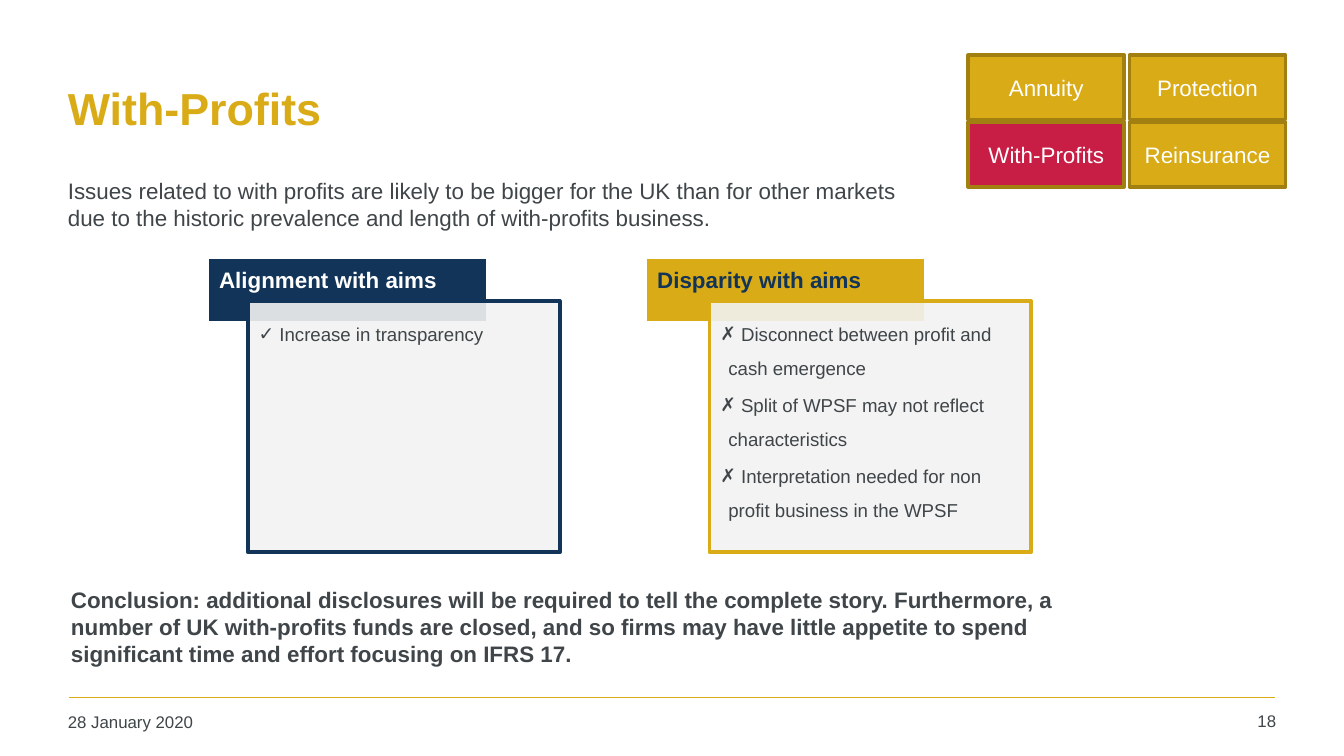
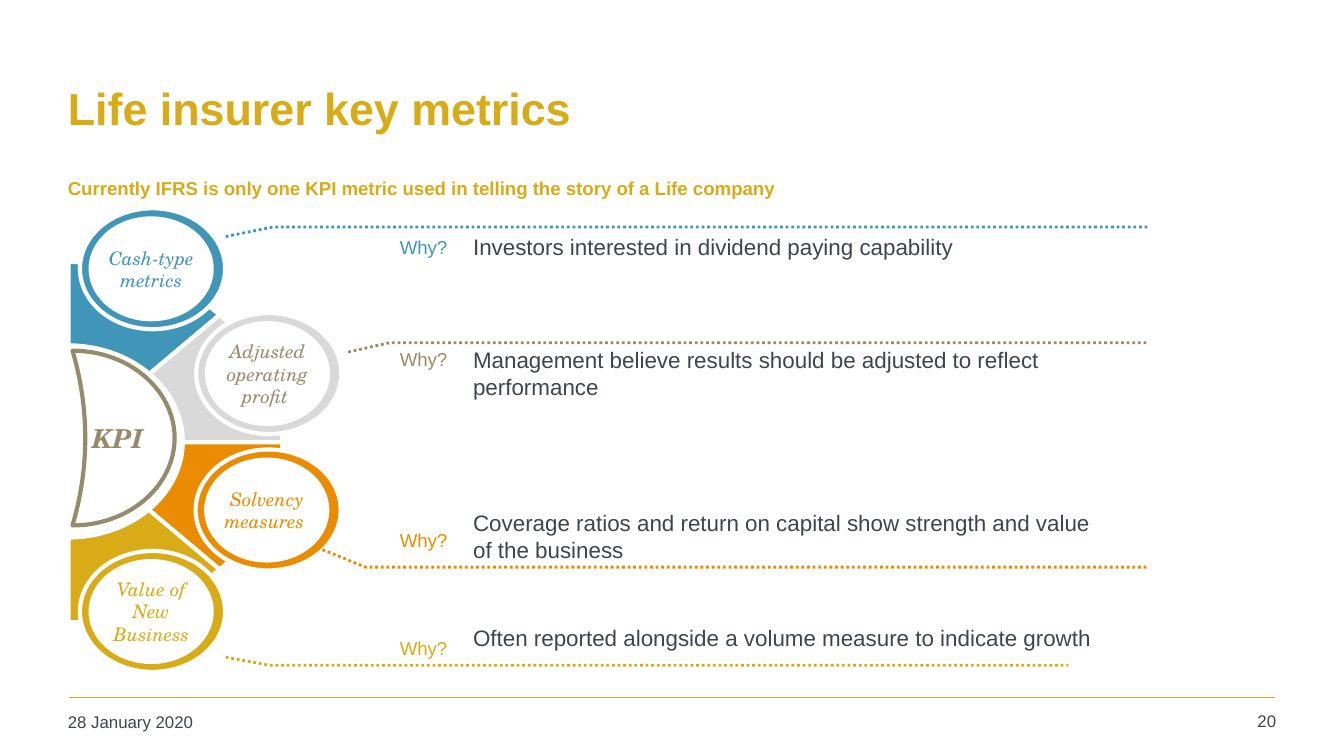
import math

import lxml.etree
import pptx
import pptx.dml.color
import pptx.enum.dml
import pptx.enum.shapes
import pptx.enum.text
import pptx.oxml.ns
import pptx.util

WIDE = pptx.util.Inches(10)
HIGH = pptx.util.Inches(5.625)
CELL = WIDE / 100
SANS = "Arial"
SERIF = "TeX Gyre Schola"
HUE = {
    "gold": "D9AB16", "bronze": "A17F10", "navy": "113458", "red": "C81E45",
    "ink": "3F4548", "white": "FFFFFF", "pale": "F2F2F2", "blue": "4096B8",
    "grey": "D9D9D9", "stone": "968C6D", "orange": "EB8C00",
}
FORM = pptx.enum.shapes.MSO_SHAPE
SIDE = pptx.enum.text.PP_ALIGN
ANCHOR = pptx.enum.text.MSO_ANCHOR
MARGIN = (0.75, 0.38, 0.75, 0.38)
NONE = (0, 0, 0, 0)
HUB = (5.1, 32.9)
REACH = (15.9, 13.4)


def grid(*cells):
    return [pptx.util.Emu(round(cell * CELL)) for cell in cells]


def tint(name):
    return pptx.dml.color.RGBColor.from_string(HUE[name])


def tag(node, name, **marks):
    return lxml.etree.SubElement(node, pptx.oxml.ns.qn(name), **marks)


def write(frame, text, size=12, color="ink", font=SANS, bold=False, slant=False,
          align=SIDE.LEFT, anchor=ANCHOR.TOP, inset=(1, 0.5, 1, 0.5),
          lead=None, after=None, bullet=None):
    frame.word_wrap = True
    frame.vertical_anchor = anchor
    (frame.margin_left, frame.margin_top,
     frame.margin_right, frame.margin_bottom) = grid(*inset)
    for row, line in enumerate(text.split("\n")):
        para = frame.add_paragraph() if row else frame.paragraphs[0]
        if bullet:
            props = para._p.get_or_add_pPr()
            hang = grid(0.6)[0]
            props.set("marL", str(hang))
            props.set("indent", str(-hang))
            tag(props, "a:buFont", typeface=font)
            tag(props, "a:buChar", char=bullet)
        para.alignment = align
        if lead:
            para.line_spacing = lead
        if after:
            para.space_after = pptx.util.Pt(after)
        run = para.add_run()
        run.text = line
        run.font.name = font
        run.font.size = pptx.util.Pt(size)
        run.font.bold = bold
        run.font.italic = slant
        run.font.color.rgb = tint(color)


def label(slide, spot, text, **style):
    write(slide.shapes.add_textbox(*grid(*spot)).text_frame, text, **style)


def paint(shape, fill, line, width):
    shape.shadow.inherit = False
    if fill:
        shape.fill.solid()
        shape.fill.fore_color.rgb = tint(fill)
    else:
        shape.fill.background()
    shape.line.color.rgb = tint(line)
    shape.line.width = pptx.util.Pt(width)


def block(slide, form, spot, fill, line, width=2, text=None, **style):
    shape = slide.shapes.add_shape(form, *grid(*spot))
    paint(shape, fill, line, width)
    if text:
        write(shape.text_frame, text, **style)
    return shape


def trace(slide, points, fill, line, width, close):
    spots = [grid(*point) for point in points]
    pen = slide.shapes.build_freeform(*spots[0])
    pen.add_line_segments(spots[1:], close=close)
    shape = pen.convert_to_shape()
    paint(shape, fill, line, width)
    return shape


def wedge(slide, start, stop, fill):
    first, last = math.radians(start), math.radians(stop)
    pull = 4 / 3 * math.tan((last - first) / 4)

    def spot(turn, bend):
        return (HUB[0] + REACH[0] * (math.cos(turn) - bend * math.sin(turn)),
                HUB[1] + REACH[1] * (math.sin(turn) + bend * math.cos(turn)))

    shape = trace(slide, [HUB, spot(first, 0), spot(first, pull),
                          spot(last, -pull), spot(last, 0)],
                  fill, "white", 2.25, True)
    name = pptx.oxml.ns.qn("a:lnTo")
    edge = shape._element.find(".//" + name).getparent()
    arc = tag(edge, "a:cubicBezTo")
    for leg in edge.findall(name)[1:]:
        arc.append(leg[0])
        edge.remove(leg)
    edge.append(edge.find(pptx.oxml.ns.qn("a:close")))


def rule(deck, slide):
    line = slide.shapes.add_connector(
        pptx.enum.shapes.MSO_CONNECTOR.STRAIGHT, *grid(5.1, 51.9, 94.9, 51.9))
    line.line.color.rgb = tint("gold")
    line.line.width = pptx.util.Pt(1)
    node = line._element
    tag(node.spPr, "a:effectLst")
    node.remove(node.find(pptx.oxml.ns.qn("p:style")))
    node.nvCxnSpPr.cNvPr.set("id", "99")
    deck.slide_layouts[5].shapes._spTree.append(node)


def start(deck, title, page):
    slide = deck.slides.add_slide(deck.slide_layouts[5])
    head = slide.shapes.title
    head.left, head.top, head.width, head.height = grid(4.3, 3.3, 90.7, 9.4)
    write(head.text_frame, title, size=24, color="gold", bold=True,
          anchor=ANCHOR.MIDDLE, inset=MARGIN)
    label(slide, (4.3, 52.55, 22, 2.7), "28 January 2020", size=9, inset=MARGIN)
    label(slide, (88.6, 52.5, 7.1, 2.8), page, size=9, inset=MARGIN,
          align=SIDE.RIGHT)
    return slide


def menu(slide, names, chosen):
    for spot, name in enumerate(names):
        row, col = divmod(spot, 2)
        block(slide, FORM.RECTANGLE, (72.05 + 12 * col, 4.1 + 5 * row, 11.6, 4.8),
              "red" if name == chosen else "gold", "bronze", text=name,
              color="white", align=SIDE.CENTER, anchor=ANCHOR.MIDDLE)


def panel(slide, left, inner, width, color, ink, title, bullet, text):
    block(slide, FORM.RECTANGLE, (left, 19.1, 20.9, 4.9), color, "white",
          text=title, color=ink, bold=True, lead=0.9, inset=(0.9, 0.9, 0.9, 0.5))
    card = block(slide, FORM.FLOWCHART_PROCESS, (inner, 22.4, width, 18.7),
                 "pale", color, text=text, size=10, bullet=bullet, lead=1.5,
                 after=2, inset=(0.8, 0.8, 0.8, 0.8))
    shade = card._element.spPr.find(".//" + pptx.oxml.ns.qn("a:srgbClr"))
    tag(shade, "a:alpha", val="90000")


def profits(deck):
    slide = start(deck, "With-Profits", "18")
    rule(deck, slide)
    label(slide, (4.3, 12.8, 63.3, 5),
          "Issues related to with profits are likely to be bigger for the UK than "
          "for other markets due to the historic prevalence and length of "
          "with-profits business.", inset=MARGIN)
    panel(slide, 15.4, 18.45, 23.2, "navy", "white", "Alignment with aims", "✓",
          " Increase in transparency")
    panel(slide, 48, 52.8, 23.9, "gold", "navy", "Disparity with aims", "✗",
          " Disconnect between profit and cash emergence\n"
          " Split of WPSF may not reflect characteristics\n"
          " Interpretation needed for non profit business in the WPSF")
    menu(slide, ["Annuity", "Protection", "With-Profits", "Reinsurance"],
         "With-Profits")
    label(slide, (4.3, 43.15, 75.6, 7.1),
          "Conclusion: additional disclosures will be required to tell the "
          "complete story. Furthermore, a number of UK with-profits funds are "
          "closed, and so firms may have little appetite to spend significant "
          "time and effort focusing on IFRS 17.", bold=True)


def wheel(slide, nodes):
    for step, (fill, *rest) in enumerate(nodes):
        wedge(slide, 45 * step - 90, 45 * step - 45, fill)
    for fill, ink, left, top, name in nodes:
        block(slide, FORM.OVAL, (left, top, 10.8, 9), fill, "white", 2.25)
        block(slide, FORM.OVAL, (left + 0.8, top + 0.75, 9, 7.5), "white",
              "white", 2.25, name, size=10, color=ink, font=SERIF, slant=True,
              align=SIDE.CENTER, anchor=ANCHOR.MIDDLE, inset=NONE)
    block(slide, FORM.OVAL, (-3.5, 25.7, 17.1, 14.3), "white", "white", 2.25)
    moon = block(slide, FORM.MOON, (5.4, 26.1, 7.6, 13), "white", "stone", 2.25,
                 "KPI", size=14, color="stone", font=SERIF, bold=True, slant=True,
                 anchor=ANCHOR.MIDDLE, inset=(0.5, 0, 0, 0))
    moon.adjustments[0] = 0.875
    moon._element.spPr.xfrm.set("flipH", "1")


def reason(slide, color, points, ask, top, width, text):
    dots = trace(slide, points, None, color, 1.5, False)
    dots.line.dash_style = pptx.enum.dml.MSO_LINE.ROUND_DOT
    label(slide, (35.2, top, width, 2 * math.ceil(len(text) / 62)), text,
          inset=NONE)
    label(slide, (29.75, ask, 6.4, 1.2), "Why?", size=10, color=color,
          align=SIDE.JUSTIFY, inset=NONE)


def metrics(deck):
    slide = start(deck, "Life insurer key metrics", "20")
    label(slide, (4.3, 12.75, 90.7, 2.6),
          "Currently IFRS is only one KPI metric used in telling the story of a "
          "Life company", size=10, color="gold", bold=True, inset=MARGIN)
    wheel(slide, [
        ("blue", "blue", 5.95, 15.5, "Cash-type metrics"),
        ("grey", "stone", 14.6, 23.3, "Adjusted operating profit "),
        ("orange", "orange", 14.55, 33.45, "Solvency measures "),
        ("gold", "gold", 5.95, 41, "Value of New Business"),
    ])
    reason(slide, "blue", [(16.8, 17.6), (20.3, 16.9), (85.4, 16.9)], 17.55, 17.35,
           50.8, "Investors interested in dividend paying capability")
    reason(slide, "stone", [(25.9, 26.2), (29, 25.5), (85.4, 25.5)], 25.9, 25.75,
           46.3, "Management believe results should be adjusted to reflect "
           "performance")
    reason(slide, "orange", [(24, 40.9), (27.2, 42.2), (85.4, 42.2)], 39.35, 37.9,
           47.1, "Coverage ratios and return on capital show strength and value "
           "of the business")
    reason(slide, "gold", [(16.8, 48.9), (20, 49.5), (79.5, 49.5)], 47.4, 46.45,
           54, "Often reported alongside a volume measure to indicate growth")


def main():
    deck = pptx.Presentation()
    deck.slide_width = WIDE
    deck.slide_height = HIGH
    profits(deck)
    metrics(deck)
    deck.save("out.pptx")


if __name__ == "__main__":
    main()
